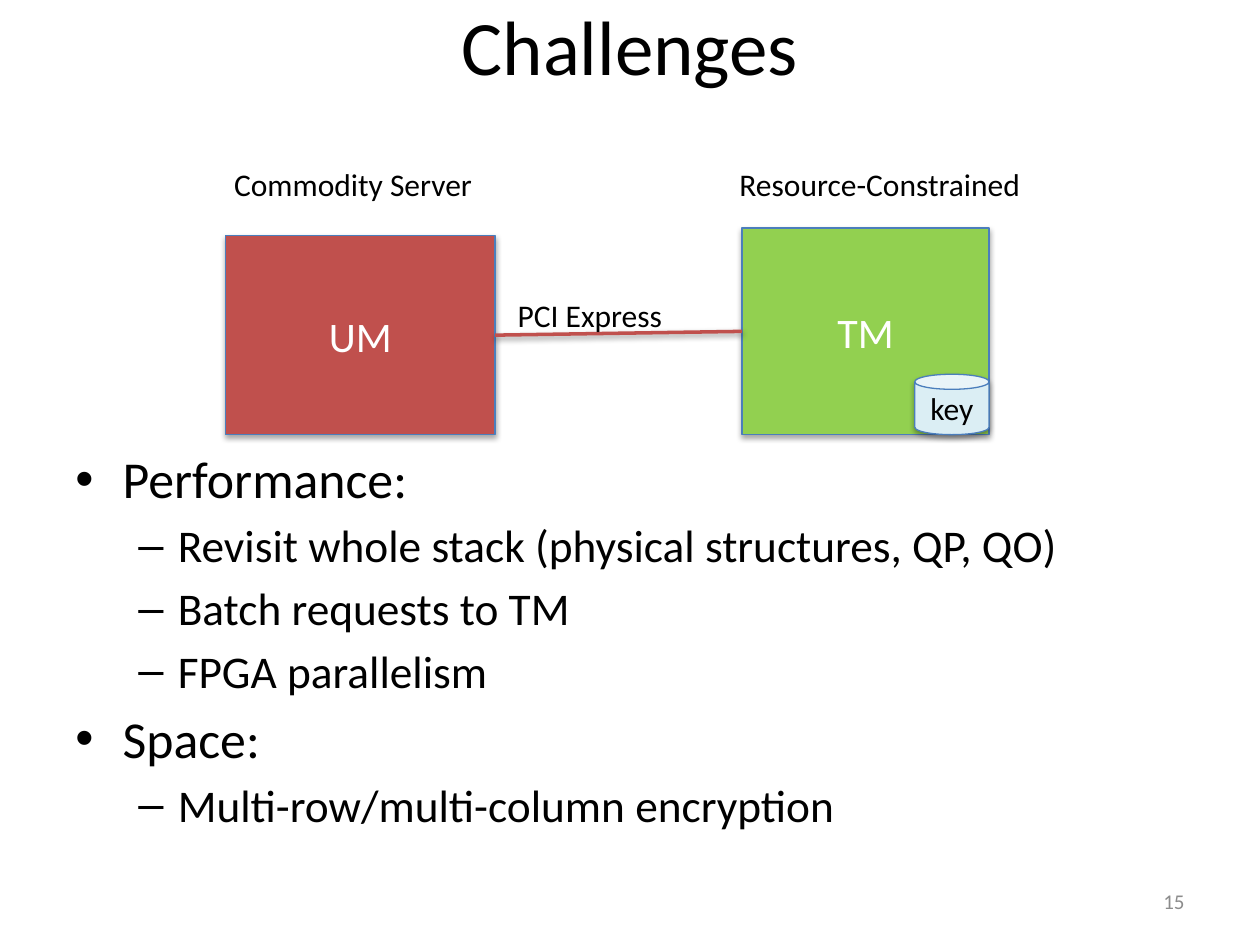
import pptx
import pptx.dml.color
import pptx.enum.shapes
import pptx.enum.text
import pptx.oxml.ns
import pptx.util
from lxml import etree

RGBColor = pptx.dml.color.RGBColor
MSO_SHAPE = pptx.enum.shapes.MSO_SHAPE
ALIGN = pptx.enum.text.PP_ALIGN
MIDDLE = pptx.enum.text.MSO_ANCHOR.MIDDLE

BLACK = RGBColor(0x00, 0x00, 0x00)
WHITE = RGBColor(0xFF, 0xFF, 0xFF)
GREY = RGBColor(0x8C, 0x8C, 0x8C)
RED = RGBColor(0xC0, 0x50, 0x4D)
GREEN = RGBColor(0x92, 0xD0, 0x50)
PALE_BLUE = RGBColor(0xDB, 0xEE, 0xF4)
OUTLINE = RGBColor(0x4B, 0x7E, 0xBC)

prs = pptx.Presentation()
prs.slide_width = pptx.util.Inches(10)
prs.slide_height = pptx.util.Inches(7.5)
COL = prs.slide_width / 100
ROW = prs.slide_height / 75


def cells(col, row, cols, rows):
    """Turn grid cells into left, top, width and height."""
    return int(col * COL), int(row * ROW), int(cols * COL), int(rows * ROW)


def write(p, text, size, color, align=ALIGN.LEFT):
    p.text = text
    p.alignment = align
    p.font.name = "Calibri"
    p.font.size = pptx.util.Pt(size)
    p.font.color.rgb = color


s = prs.slides.add_slide(prs.slide_layouts[5])

# Title
title = s.shapes.title
title.left, title.top, title.width, title.height = cells(5, -0.8, 90, 8.7)
title.text_frame.vertical_anchor = MIDDLE
write(title.text_frame.paragraphs[0], "Challenges", 44, BLACK, ALIGN.CENTER)

# Bulleted list: level, text
bullets = [
    (0, "Performance:"),
    (1, "Revisit whole stack (physical structures, QP, QO)"),
    (1, "Batch requests to TM"),
    (1, "FPGA parallelism"),
    (0, "Space:"),
    (1, "Multi-row/multi-column encryption"),
]
# Per level: bullet, size, left margin and hanging indent in columns
levels = [("•", 29.6, 3.75, 3.75), ("–", 25.9, 8.13, 3.13)]

tf = s.shapes.add_textbox(*cells(5, 35, 90, 32.5)).text_frame
tf.word_wrap = True
for i, (level, text) in enumerate(bullets):
    char, size, margin, hang = levels[level]
    p = tf.add_paragraph() if i else tf.paragraphs[0]
    write(p, text, size, BLACK)
    p.level = level
    p.space_before = pptx.util.Pt(round(0.18 * size, 1))
    pPr = p._p.get_or_add_pPr()
    pPr.set("marL", str(int(margin * COL)))
    pPr.set("indent", str(int(-hang * COL)))
    bullet_font = etree.Element(pptx.oxml.ns.qn("a:buFont"), typeface="Arial")
    bullet_char = etree.Element(pptx.oxml.ns.qn("a:buChar"), char=char)
    pPr.find(pptx.oxml.ns.qn("a:spcBef")).addnext(bullet_font)
    bullet_font.addnext(bullet_char)

# Machines and key store; the theme's soft shadow is kept
blocks = [
    ("TM", MSO_SHAPE.RECTANGLE, (58.9, 18.1, 19.6, 16.4), GREEN, 24, WHITE),
    ("UM", MSO_SHAPE.RECTANGLE, (17.9, 18.7, 21.4, 15.8), RED, 24, WHITE),
    ("key", MSO_SHAPE.CAN, (72.6, 29.7, 5.9, 4.8), PALE_BLUE, 18, BLACK),
]
machines = {}
for name, kind, area, fill, size, color in blocks:
    sp = s.shapes.add_shape(kind, *cells(*area))
    sp.fill.solid()
    sp.fill.fore_color.rgb = fill
    sp.line.color.rgb = OUTLINE
    sp.line.width = pptx.util.Pt(0.75)
    sp.text_frame.vertical_anchor = MIDDLE
    sp.text_frame.word_wrap = kind == MSO_SHAPE.RECTANGLE
    write(sp.text_frame.paragraphs[0], name, size, color, ALIGN.CENTER)
    machines[name] = sp

# Link from the right side of UM to the left side of TM
link = s.shapes.add_connector(pptx.enum.shapes.MSO_CONNECTOR.STRAIGHT, 0, 0, 0, 0)
link.begin_connect(machines["UM"], 3)
link.end_connect(machines["TM"], 1)
link.line.color.rgb = RED
link.line.width = pptx.util.Pt(2)

# Labels and slide number
labels = [
    ("Commodity Server", (17.6, 12.6, 24.2, 4), 18, BLACK, ALIGN.LEFT),
    ("Resource-Constrained", (57.7, 12.6, 24.8, 4), 18, BLACK, ALIGN.LEFT),
    ("PCI Express", (40.1, 23, 13.6, 4), 18, BLACK, ALIGN.LEFT),
    ("15", (71.7, 69.5, 23.3, 4), 12, GREY, ALIGN.RIGHT),
]
for text, area, size, color, align in labels:
    tf = s.shapes.add_textbox(*cells(*area)).text_frame
    tf.word_wrap = text != "PCI Express"
    tf.vertical_anchor = MIDDLE
    write(tf.paragraphs[0], text, size, color, align)

prs.save("out.pptx")
